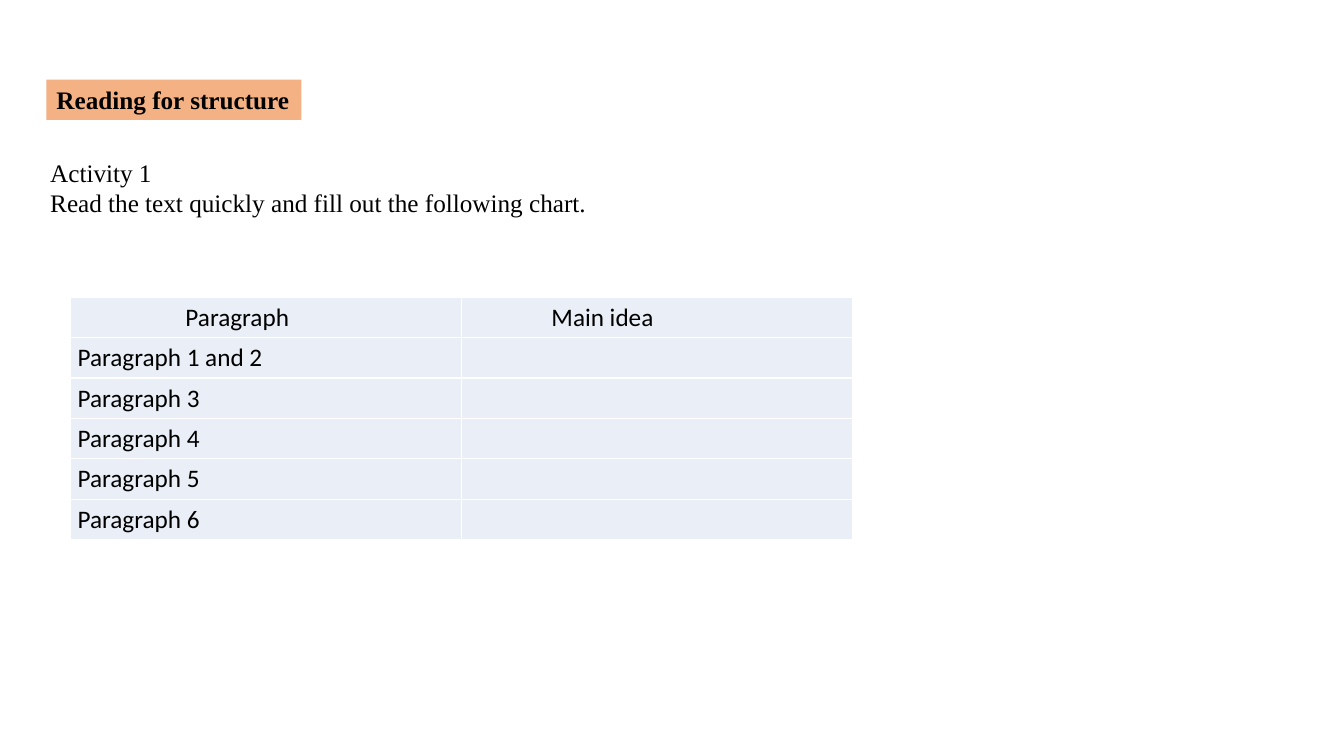
from lxml import etree
from pptx import Presentation
from pptx import util as u
from pptx.dml.color import RGBColor
from pptx.enum import text
from pptx.oxml import ns

# Content
HEADING = "Reading for structure"
ACTIVITY = ["Activity 1", "Read the text quickly and fill out the following chart."]
ROWS = [
    ("Paragraph", "Main idea"),
    ("Paragraph 1 and 2", ""),
    ("Paragraph 3", ""),
    ("Paragraph 4", ""),
    ("Paragraph 5", ""),
    ("Paragraph 6", ""),
]
HEADER_INDENTS = (107, 82)

# Layout in px, 100 to the inch
PX = u.Inches(1) // 100
SLIDE = (1333, 750)
HEADING_BOX = (46, 79, 253, 40)
ACTIVITY_BOX = (40, 151, 667, 71)
TABLE_LEFT, TABLE_TOP = 70, 295
COLUMN_WIDTH, ROW_HEIGHT = 388, 40
CELL_MARGIN = 7

BLACK = RGBColor(0x00, 0x00, 0x00)
WHITE = RGBColor(0xFF, 0xFF, 0xFF)
ORANGE = RGBColor(0xF4, 0xB1, 0x83)
PALE_BLUE = RGBColor(0xEA, 0xEF, 0xF7)
SERIF, SANS = "Times New Roman", "Calibri"


def px(*lengths):
    return [length * PX for length in lengths]


def write(frame, lines, font=SERIF, size=18, bold=False, indent=0):
    for number, line in enumerate(lines):
        para = frame.add_paragraph() if number else frame.paragraphs[0]
        para.alignment = text.PP_ALIGN.JUSTIFY
        para.line_spacing = 1.0
        if indent:
            para._p.get_or_add_pPr().set("indent", str(indent * PX))
        para.font.size = u.Pt(size)
        if line:
            span = para.add_run()
            span.text = line
            span.font.name, span.font.size = font, u.Pt(size)
            span.font.bold, span.font.color.rgb = bold, BLACK


def add_borders(cell, color, points):
    properties = cell._tc.get_or_add_tcPr()
    for place, side in enumerate(("lnL", "lnR", "lnT", "lnB")):
        line = etree.Element(ns.qn("a:" + side), w=str(u.Pt(points)))
        fill = etree.SubElement(line, ns.qn("a:solidFill"))
        etree.SubElement(fill, ns.qn("a:srgbClr"), val=str(color))
        properties.insert(place, line)


deck = Presentation()
deck.slide_width, deck.slide_height = px(*SLIDE)
page = deck.slides.add_slide(deck.slide_layouts[5])

# Heading
heading = page.shapes.title
heading.left, heading.top, heading.width, heading.height = px(*HEADING_BOX)
heading.fill.solid()
heading.fill.fore_color.rgb = ORANGE
heading.text_frame.auto_size = text.MSO_AUTO_SIZE.NONE
heading.text_frame.word_wrap = False
heading.text_frame.vertical_anchor = text.MSO_ANCHOR.TOP
write(heading.text_frame, [HEADING], bold=True)

# Activity instructions
box = page.shapes.add_textbox(*px(*ACTIVITY_BOX))
box.text_frame.word_wrap = True
write(box.text_frame, ACTIVITY)

# Main idea table
columns = len(ROWS[0])
size = px(COLUMN_WIDTH * columns, ROW_HEIGHT * len(ROWS))
table = page.shapes.add_table(len(ROWS), columns, *px(TABLE_LEFT, TABLE_TOP), *size).table
table.first_row = table.horz_banding = False
for r, row in enumerate(ROWS):
    for c, label in enumerate(row):
        cell = table.cell(r, c)
        cell.margin_left = cell.margin_right = CELL_MARGIN * PX
        cell.fill.solid()
        cell.fill.fore_color.rgb = PALE_BLUE
        add_borders(cell, WHITE, 1)
        write(cell.text_frame, [label], font=SANS, indent=0 if r else HEADER_INDENTS[c])

deck.save("out.pptx")
